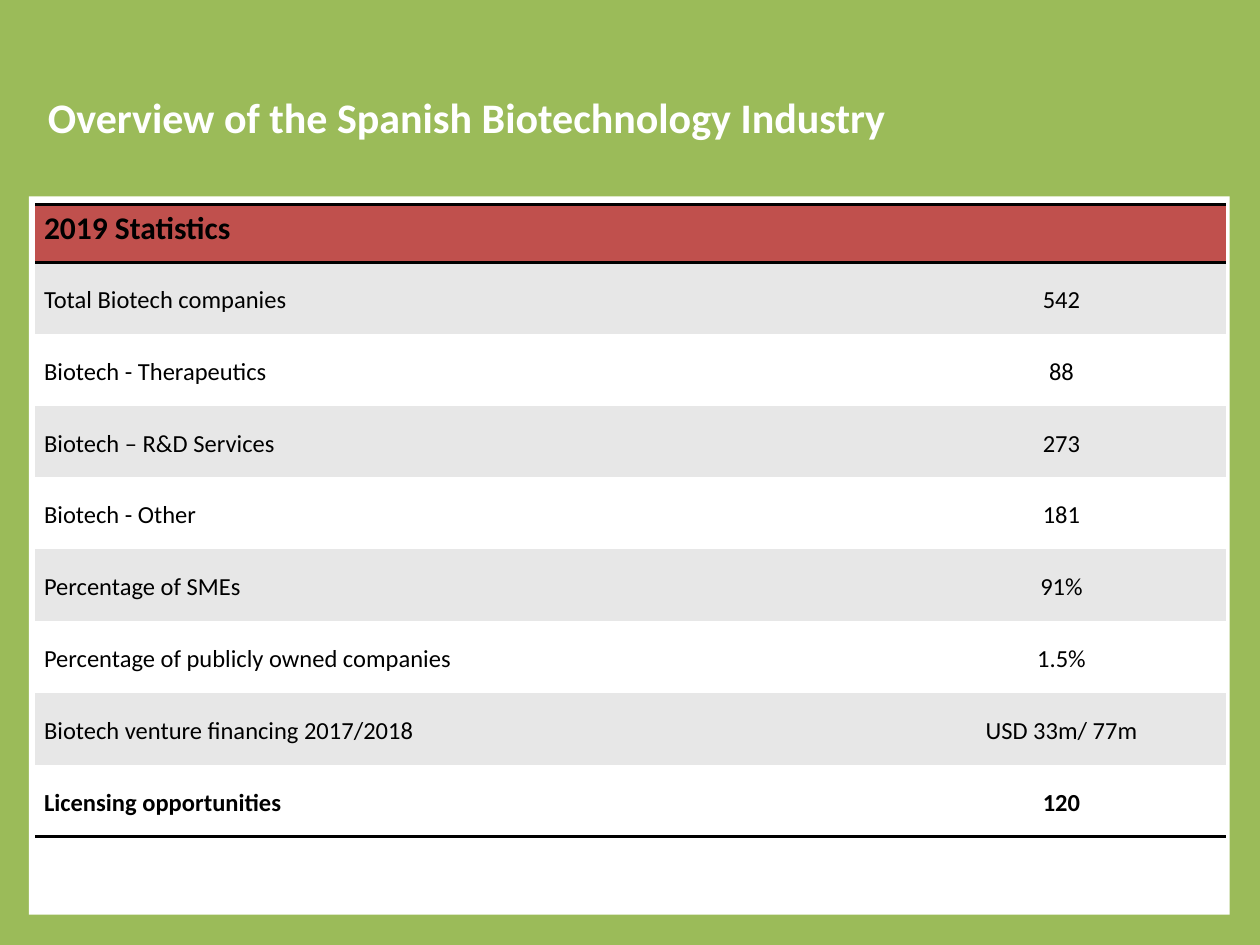
from dataclasses import dataclass

from lxml import etree
from pptx import Presentation
from pptx.dml.color import RGBColor
from pptx.enum import shapes, text
from pptx.oxml import ns
from pptx.util import Inches, Pt


@dataclass(frozen=True)
class Theme:
    font: str = "Calibri"
    background: str = "9BBB59"
    white: str = "FFFFFF"
    black: str = "000000"
    header: str = "C0504D"
    band: str = "E7E7E7"
    title_size: int = 24
    header_size: int = 18
    body_size: int = 14
    rule_width: int = 2


theme = Theme()


def write(frame, content, size=theme.body_size, color=theme.black, bold=False,
          align=text.PP_ALIGN.LEFT, anchor=text.MSO_ANCHOR.MIDDLE, spacing=1.15):
    frame.word_wrap = True
    frame.vertical_anchor = anchor
    paragraph = frame.paragraphs[0]
    paragraph.alignment = align
    paragraph.line_spacing = spacing
    run = paragraph.add_run()
    run.text = content
    run.font.name = theme.font
    run.font.size = Pt(size)
    run.font.bold = bold
    run.font.color.rgb = RGBColor.from_string(color)


def style_cell(cell, fill, edges=()):
    cell.margin_left = cell.margin_right = Inches(0.07)
    cell.margin_top = cell.margin_bottom = 0
    cell.fill.solid()
    cell.fill.fore_color.rgb = RGBColor.from_string(fill)
    properties = cell._tc.get_or_add_tcPr()
    for position, edge in enumerate(edges):
        line = etree.Element(ns.qn(f"a:ln{edge}"), w=str(Pt(theme.rule_width)))
        paint = etree.SubElement(line, ns.qn("a:solidFill"))
        etree.SubElement(paint, ns.qn("a:srgbClr"), val=theme.black)
        properties.insert(position, line)


prs = Presentation()
prs.slide_width, prs.slide_height = Inches(10), Inches(7.5)
slide = prs.slides.add_slide(prs.slide_layouts[5])
slide.background.fill.solid()
slide.background.fill.fore_color.rgb = RGBColor.from_string(theme.background)

title = slide.shapes.title
title.left, title.top = Inches(0.28), Inches(0.3)
title.width, title.height = Inches(9), Inches(1.25)
write(title.text_frame, "Overview of the Spanish Biotechnology Industry",
      size=theme.title_size, color=theme.white, bold=True, spacing=1.0)

panel = slide.shapes.add_shape(shapes.MSO_SHAPE.RECTANGLE,
                               Inches(0.23), Inches(1.56), Inches(9.53), Inches(5.7))
panel.shadow.inherit = False
panel.fill.solid()
panel.fill.fore_color.rgb = RGBColor.from_string(theme.white)
panel.line.fill.background()

statistics = [
    ("Total Biotech companies", "542"),
    ("Biotech - Therapeutics", "88"),
    ("Biotech – R&D Services", "273"),
    ("Biotech - Other", "181"),
    ("Percentage of SMEs", "91%"),
    ("Percentage of publicly owned companies", "1.5%"),
    ("Biotech venture financing 2017/2018", "USD 33m/ 77m"),
    ("Licensing opportunities", "120"),
]

statistics_frame = slide.shapes.add_table(len(statistics) + 1, 2, Inches(0.28), Inches(1.62),
                                          Inches(9.45), Inches(5.02))
table = statistics_frame.table
table.horz_banding = False
NO_STYLE_NO_GRID = "{2D5ABB26-0587-4C30-8999-92F81FD0307C}"
table._tbl.tblPr.find(ns.qn("a:tableStyleId")).text = NO_STYLE_NO_GRID
for column, width in zip(table.columns, (6.84, 2.61)):
    column.width = Inches(width)
for index, row in enumerate(table.rows):
    row.height = Inches(0.57 if index else 0.46)

for cell in table.rows[0].cells:
    style_cell(cell, theme.header, edges="TB")
heading = table.cell(0, 0)
heading.merge(table.cell(0, 1))
write(heading.text_frame, "2019 Statistics", size=theme.header_size, bold=True,
      anchor=text.MSO_ANCHOR.TOP)

for index, entry in enumerate(statistics, start=1):
    last = index == len(statistics)
    for column, (content, align) in enumerate(zip(entry, (text.PP_ALIGN.LEFT,
                                                         text.PP_ALIGN.CENTER))):
        cell = table.cell(index, column)
        style_cell(cell, theme.band if index % 2 else theme.white, edges="B" if last else "")
        cell.vertical_anchor = text.MSO_ANCHOR.MIDDLE
        write(cell.text_frame, content, bold=last, align=align)

prs.save("out.pptx")
